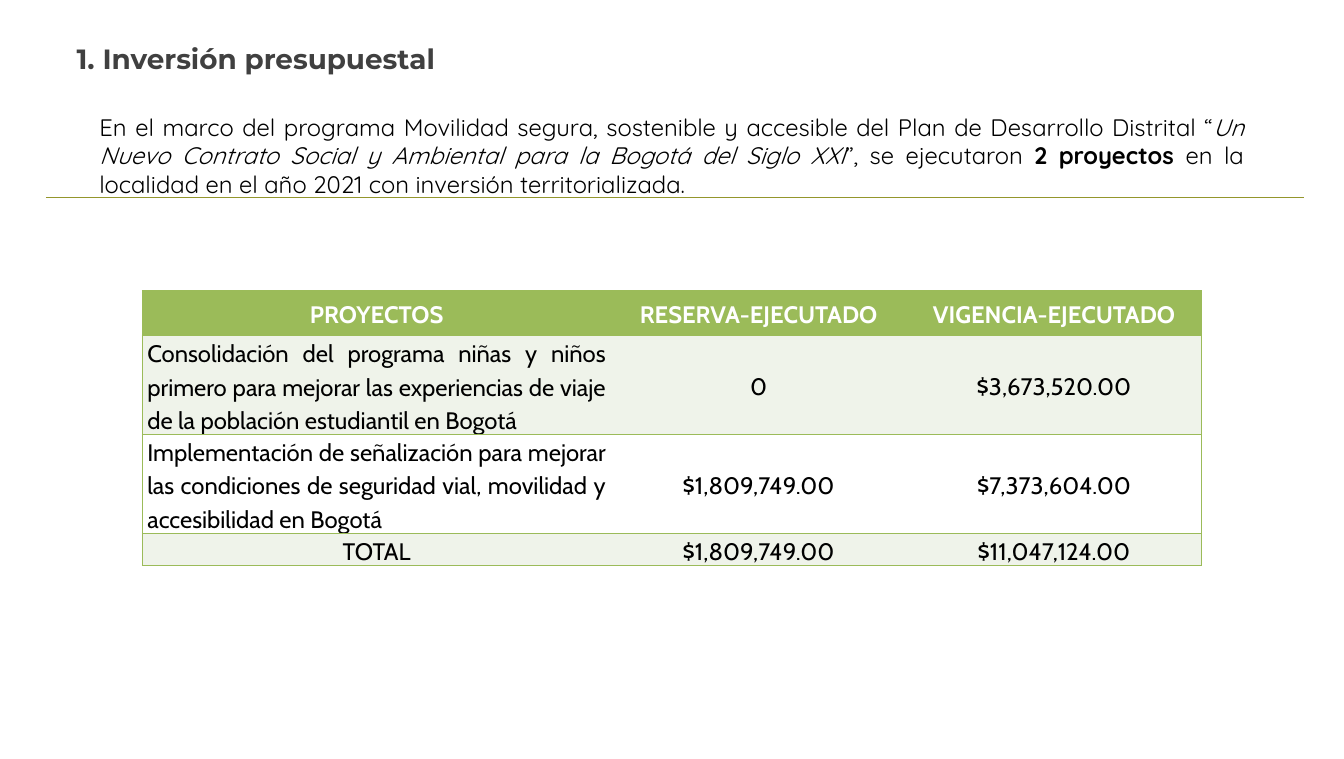
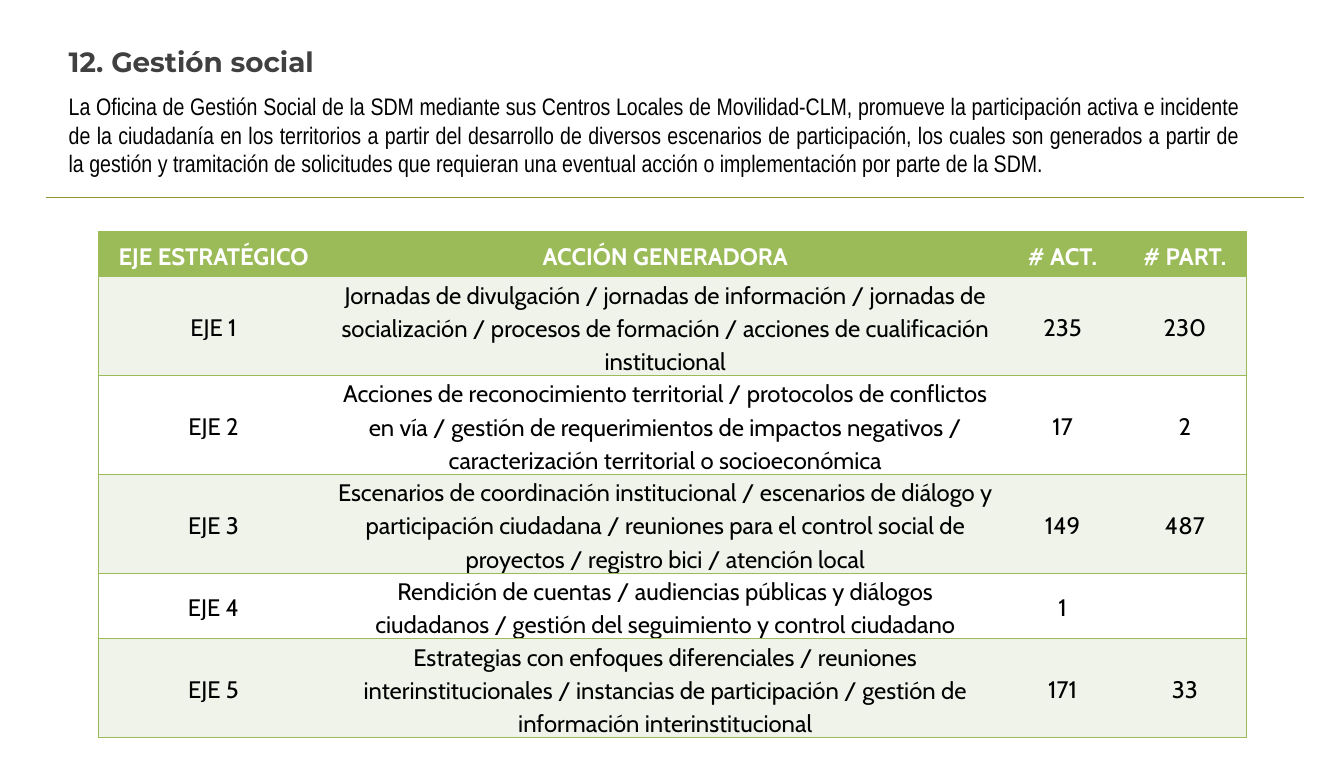
"""Builds two slides on a locality's budget investment and social management."""
import pptx
import pptx.dml.color
import pptx.enum.shapes
import pptx.enum.text
import pptx.oxml
import pptx.oxml.ns
import pptx.util

Inches = pptx.util.Inches
Pt = pptx.util.Pt
RGBColor = pptx.dml.color.RGBColor
ALIGN = pptx.enum.text.PP_ALIGN
ANCHOR = pptx.enum.text.MSO_ANCHOR

GREEN = RGBColor(0x9B, 0xBB, 0x59)
PALE_GREEN = RGBColor(0xEF, 0xF3, 0xEA)
OLIVE = RGBColor(0x94, 0x96, 0x2C)
DARK_GREY = RGBColor(0x40, 0x40, 0x40)
BLACK = RGBColor(0, 0, 0)
WHITE = RGBColor(0xFF, 0xFF, 0xFF)

TITLE_FONT = {"name": "Montserrat", "size": Pt(28), "bold": True}
INTRO_FONT = {"size": Pt(24)}
HEADER_FONT = {"name": "Cabin", "size": Pt(24), "bold": True}
CELL_FONT = {"name": "Cabin", "size": Pt(24), "bold": False}
CELL_FORMAT = {
    "margin_left": Inches(0.07), "margin_right": Inches(0.07),
    "margin_top": 0, "margin_bottom": 0,
}
CELL_SPACING = {"line_spacing": 1.15, "space_after": Pt(10)}
HEADER_HEIGHT = 0.63
LINE_HEIGHT = 0.46

SLIDES = [
    {
        "title": "1. Inversión presupuestal",
        "title_box": (0.97, 0.53, 11.58, 0.57),
        "intro": [
            ("En el marco del programa Movilidad segura, sostenible y accesible del "
             "Plan de Desarrollo Distrital “", {}),
            ("Un Nuevo Contrato Social y Ambiental para la Bogotá del Siglo XXI",
             {"italic": True}),
            ("”, se ejecutaron ", {}),
            ("2 proyectos ", {"bold": True}),
            ("en la localidad en el año 2021 con inversión territorializada.", {}),
        ],
        "intro_font": "Quicksand",
        "intro_box": (1.29, 1.52, 16.2, 1.31),
        "table_corner": (1.99, 4.06),
        "columns": [6.55, 4.13, 4.13],
        "text_lines": [3, 3, 1],
        "first_column": {0: ALIGN.JUSTIFY, 1: ALIGN.JUSTIFY, 2: ALIGN.CENTER},
        "rows": [
            ("PROYECTOS", "RESERVA-EJECUTADO", "VIGENCIA-EJECUTADO"),
            ("Consolidación del programa niñas y niños primero para mejorar las "
             "experiencias de viaje de la población estudiantil en Bogotá",
             "0", "$3,673,520.00"),
            ("Implementación de señalización para mejorar las condiciones de "
             "seguridad vial, movilidad y accesibilidad en Bogotá",
             "$1,809,749.00", "$7,373,604.00"),
            ("TOTAL", "$1,809,749.00", "$11,047,124.00"),
        ],
    },
    {
        "title": "12. Gestión social",
        "title_box": (0.86, 0.58, 12.47, 0.57),
        "intro": [
            ("La Oficina de Gestión Social de la SDM mediante sus Centros Locales de "
             "Movilidad-CLM, promueve la participación activa e incidente de la "
             "ciudadanía en los territorios a partir del desarrollo de diversos "
             "escenarios de participación, los cuales son generados a partir de la "
             "gestión y tramitación de solicitudes que requieran una eventual acción "
             "o implementación por parte de la SDM.", {}),
        ],
        "intro_font": "Arial Narrow",
        "intro_box": (0.86, 1.23, 16.56, 1.31),
        "table_corner": (1.37, 3.24),
        "columns": [3.23, 9.4, 1.71, 1.71],
        "text_lines": [3, 3, 3, 2, 3],
        "first_column": {},
        "rows": [
            ("EJE ESTRATÉGICO", "ACCIÓN GENERADORA", "# ACT.", "# PART."),
            ("EJE 1", "Jornadas de divulgación / jornadas de información / jornadas "
             "de socialización / procesos de formación / acciones de cualificación "
             "institucional", "235", "230"),
            ("EJE 2", "Acciones de reconocimiento territorial / protocolos de "
             "conflictos en vía / gestión de requerimientos de impactos negativos / "
             "caracterización territorial o socioeconómica", "17", "2"),
            ("EJE 3", "Escenarios de coordinación institucional / escenarios de "
             "diálogo y participación ciudadana / reuniones para el control social "
             "de proyectos / registro bici / atención local", "149", "487"),
            ("EJE 4", "Rendición de cuentas / audiencias públicas y diálogos "
             "ciudadanos / gestión del seguimiento y control ciudadano", "1", ""),
            ("EJE 5", "Estrategias con enfoques diferenciales / reuniones "
             "interinstitucionales / instancias de participación / gestión de "
             "información interinstitucional", "171", "33"),
        ],
    },
]


def apply(target, values):
    """Set each attribute named in values on target."""
    for name, value in values.items():
        setattr(target, name, value)


def add_run(paragraph, text, font, color):
    """Add a run with the given font values and colour."""
    run = paragraph.add_run()
    run.text = text
    apply(run.font, font)
    run.font.color.rgb = color


def place_text(shape, box, alignment):
    """Move a placeholder and return its first paragraph, ready for runs."""
    apply(shape, dict(zip(("left", "top", "width", "height"), map(Inches, box))))
    apply(shape.text_frame, {
        "word_wrap": True, "vertical_anchor": ANCHOR.TOP,
        "auto_size": pptx.enum.text.MSO_AUTO_SIZE.SHAPE_TO_FIT_TEXT,
    })
    paragraph = shape.text_frame.paragraphs[0]
    properties = paragraph._p.get_or_add_pPr()
    properties.set("marL", "0")
    properties.set("indent", "0")
    pptx.oxml.ns.qn("a:buNone")
    properties.append(properties.makeelement(pptx.oxml.ns.qn("a:buNone"), {}))
    apply(paragraph, {"alignment": alignment, "space_before": Pt(0)})
    return paragraph


def add_rule(slide):
    """Draw the line below the introduction."""
    rule = slide.shapes.add_connector(
        pptx.enum.shapes.MSO_CONNECTOR.STRAIGHT,
        Inches(0.64), Inches(2.76), Inches(18.23), Inches(2.76))
    rule.line.color.rgb = OLIVE
    rule.line.width = Pt(0.75)
    properties = rule._element.spPr
    properties.append(properties.makeelement(pptx.oxml.ns.qn("a:effectLst"), {}))


def set_borders(cell, is_first, is_last):
    """Draw horizontal borders, and vertical ones on the outer sides only."""
    sides = {"L": is_first, "R": is_last, "T": True, "B": True}
    properties = cell._tc.get_or_add_tcPr()
    for position, (side, visible) in enumerate(sides.items()):
        fill = (f'<a:solidFill><a:srgbClr val="{GREEN}"/></a:solidFill>'
                if visible else "<a:noFill/>")
        properties.insert(position, pptx.oxml.parse_xml(
            f'<a:ln{side} {pptx.oxml.ns.nsdecls("a")} w="{Pt(1)}">{fill}</a:ln{side}>'))


def add_table(slide, content):
    """Add the green table with alternating row fills."""
    rows, columns = content["rows"], content["columns"]
    heights = [HEADER_HEIGHT] + [count * LINE_HEIGHT for count in content["text_lines"]]
    left, top = content["table_corner"]
    table = slide.shapes.add_table(
        len(rows), len(columns), Inches(left), Inches(top),
        Inches(sum(columns)), Inches(sum(heights))).table
    table.horz_banding = False
    for column, width in zip(table.columns, columns):
        column.width = Inches(width)
    for row_index, (row, height) in enumerate(zip(rows, heights)):
        table.rows[row_index].height = Inches(height)
        is_header = row_index == 0
        fill = GREEN if is_header else PALE_GREEN if row_index % 2 else WHITE
        font, color = (HEADER_FONT, WHITE) if is_header else (CELL_FONT, BLACK)
        for column_index, text in enumerate(row):
            cell = table.cell(row_index, column_index)
            cell.fill.solid()
            cell.fill.fore_color.rgb = fill
            set_borders(cell, column_index == 0, column_index == len(columns) - 1)
            alignment = None
            if column_index == 0:
                alignment = content["first_column"].get(row_index - 1)
            apply(cell, CELL_FORMAT)
            cell.vertical_anchor = ANCHOR.MIDDLE if alignment is None else ANCHOR.TOP
            paragraph = cell.text_frame.paragraphs[0]
            paragraph.alignment = ALIGN.CENTER if alignment is None else alignment
            apply(paragraph, CELL_SPACING)
            if text:
                add_run(paragraph, text, font, color)


def add_slide(presentation, content):
    """Add one slide with title, introduction, rule and table."""
    slide = presentation.slides.add_slide(presentation.slide_layouts[1])
    title, intro = slide.placeholders
    paragraph = place_text(title, content["title_box"], ALIGN.LEFT)
    add_run(paragraph, content["title"], TITLE_FONT, DARK_GREY)
    paragraph = place_text(intro, content["intro_box"], ALIGN.JUSTIFY)
    for text, emphasis in content["intro"]:
        font = INTRO_FONT | {"name": content["intro_font"]} | emphasis
        add_run(paragraph, text, font, BLACK)
    add_rule(slide)
    add_table(slide, content)


def main():
    """Build and save the presentation."""
    presentation = pptx.Presentation()
    presentation.slide_width = Inches(18.79)
    presentation.slide_height = Inches(10.61)
    for content in SLIDES:
        add_slide(presentation, content)
    presentation.save("out.pptx")


if __name__ == "__main__":
    main()
